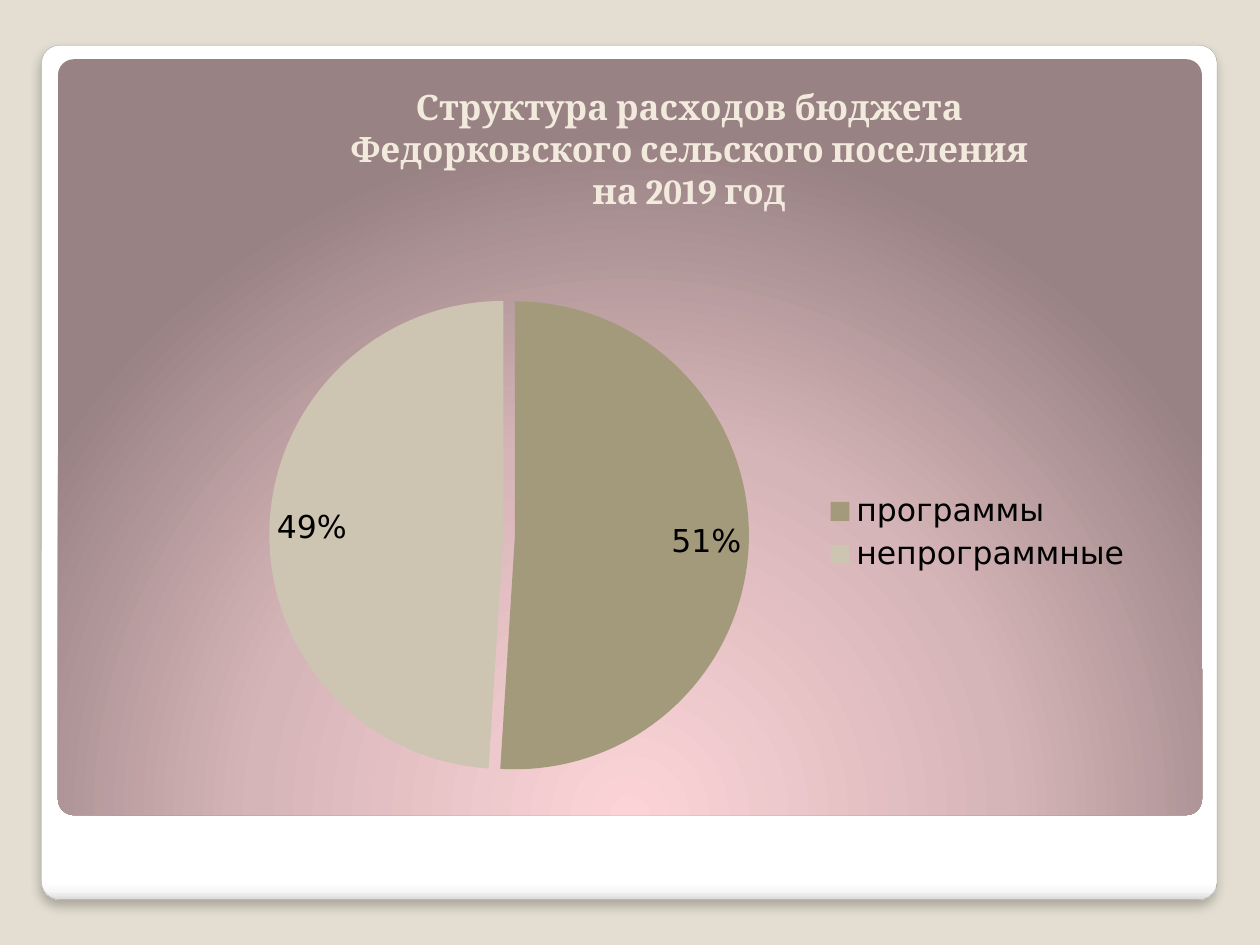
import pptx
import pptx.chart.data
import pptx.dml.color
import pptx.enum.chart
import pptx.enum.shapes
import pptx.enum.text
import pptx.oxml
import pptx.util
from pptx.util import Inches

COLORS = {
    "background": "E3DED1", "card line": "A4A4A4", "title": "F3EADE", "chart text": "000000",
}
TITLE_LINES = [
    "Структура расходов бюджета",
    "Федорковского сельского поселения",
    "на 2019 год",
]
EXPENSES = [("программы", 0.51, "A39A7B"), ("непрограммные", 0.49, "CDC4B1")]
CARD_STOPS = [(0, "FFFFFF"), (98, "FFFFFF"), (99, "F7F7F7"), (100, "DADADA")]
PANEL_STOPS = [(0, "FCD4D8"), (55, "D6B5B8"), (100, "998284")]
LINEAR_DOWN = '<a:lin ang="5400000" scaled="0"/>'
CIRCLE_FROM_BOTTOM = ('<a:path path="circle"><a:fillToRect l="50000" t="175000" '
                      'r="50000" b="-75000"/></a:path>')
PLOT_AREA = {"x": 0.133, "y": 0.098, "w": 0.465, "h": 0.811}
DRAWING = 'xmlns:a="http://schemas.openxmlformats.org/drawingml/2006/main"'
CHART = 'xmlns:c="http://schemas.openxmlformats.org/drawingml/2006/chart"'


def rgb(value):
    return pptx.dml.color.RGBColor.from_string(value)


def format_font(font, name, size, color, bold=False):
    font.name, font.size, font.bold = name, pptx.util.Pt(size), bold
    font.color.rgb = rgb(color)


def add_text(slide, lines, box, align, anchor, **font_format):
    frame = slide.shapes.add_textbox(*map(Inches, box)).text_frame
    frame.word_wrap = True
    frame.vertical_anchor = anchor
    frame.margin_bottom = Inches(0.03)
    for index, line in enumerate(lines):
        paragraph = frame.paragraphs[0] if index == 0 else frame.add_paragraph()
        paragraph.alignment = align
        run = paragraph.add_run()
        run.text = line
        format_font(run.font, **font_format)


def add_rounded_panel(slide, box, stops, direction):
    shape = slide.shapes.add_shape(
        pptx.enum.shapes.MSO_SHAPE.ROUNDED_RECTANGLE, *map(Inches, box))
    shape.adjustments[0] = 0.021
    shape.shadow.inherit = False
    shape.line.fill.background()
    stop_xml = "".join(
        f'<a:gs pos="{position * 1000}"><a:srgbClr val="{color}"/></a:gs>'
        for position, color in stops)
    gradient = pptx.oxml.parse_xml(
        f'<a:gradFill {DRAWING} rotWithShape="1"><a:gsLst>{stop_xml}</a:gsLst>{direction}</a:gradFill>')
    shape.element.spPr.find(pptx.oxml.ns.qn("a:prstGeom")).addnext(gradient)
    return shape


def add_card(slide):
    card = add_rounded_panel(slide, (0.33, 0.36, 9.33, 6.78), CARD_STOPS, LINEAR_DOWN)
    card.line.color.rgb = rgb(COLORS["card line"])
    card.line.width = pptx.util.Pt(0.16)
    effects = card.element.spPr.find(pptx.oxml.ns.qn("a:effectLst"))
    effects.append(pptx.oxml.parse_xml(
        f'<a:outerShdw {DRAWING} blurRad="{pptx.util.Pt(6)}" dist="{pptx.util.Pt(4)}" '
        'dir="5400000" algn="t" rotWithShape="0"><a:srgbClr val="000000">'
        '<a:alpha val="25000"/></a:srgbClr></a:outerShdw>'))


def set_plot_layout(chart):
    plot_area = chart.element.chart.plotArea
    for old_layout in plot_area.findall(pptx.oxml.ns.qn("c:layout")):
        plot_area.remove(old_layout)
    modes = '<c:xMode val="edge"/><c:yMode val="edge"/>'
    sizes = "".join(f'<c:{key} val="{value}"/>' for key, value in PLOT_AREA.items())
    plot_area.insert(0, pptx.oxml.parse_xml(
        f'<c:layout {CHART}><c:manualLayout><c:layoutTarget val="inner"/>'
        f'{modes}{sizes}</c:manualLayout></c:layout>'))


def add_expense_chart(slide):
    data = pptx.chart.data.CategoryChartData(number_format="0%")
    data.categories = [name for name, _, _ in EXPENSES]
    data.add_series("Series 1", [value for _, value, _ in EXPENSES])
    chart = slide.shapes.add_chart(
        pptx.enum.chart.XL_CHART_TYPE.PIE,
        *map(Inches, (1.06, 1.94, 8.03, 4.58)), data).chart
    format_font(chart.font, "DejaVu Sans", 18, COLORS["chart text"])
    chart.has_title = False
    chart.has_legend = True
    chart.legend.position = pptx.enum.chart.XL_LEGEND_POSITION.RIGHT
    chart.legend.include_in_layout = False
    set_plot_layout(chart)

    plot = chart.plots[0]
    plot.vary_by_categories = True
    plot.has_data_labels = True
    labels = plot.data_labels
    labels.show_value = True
    labels.show_percentage = False
    labels.number_format, labels.number_format_is_linked = "0%", False
    labels.position = pptx.enum.chart.XL_LABEL_POSITION.INSIDE_END
    for index, (_, _, color) in enumerate(EXPENSES):
        slice_format = plot.series[0].points[index].format
        slice_format.fill.solid()
        slice_format.fill.fore_color.rgb = rgb(color)
        slice_format.line.fill.background()
    first_slice = plot.series[0]._element.find(pptx.oxml.ns.qn("c:dPt"))
    first_slice.find(pptx.oxml.ns.qn("c:spPr")).addprevious(
        pptx.oxml.parse_xml(f'<c:explosion {CHART} val="5"/>'))


def main():
    presentation = pptx.Presentation()
    presentation.slide_width, presentation.slide_height = Inches(10), Inches(7.5)
    slide = presentation.slides.add_slide(presentation.slide_layouts[6])
    slide.background.fill.solid()
    slide.background.fill.fore_color.rgb = rgb(COLORS["background"])
    add_card(slide)
    add_rounded_panel(slide, (0.46, 0.47, 9.08, 6), PANEL_STOPS, CIRCLE_FROM_BOTTOM)
    add_text(slide, TITLE_LINES, (1.49, 0.84, 7.96, 0.87),
             pptx.enum.text.PP_ALIGN.CENTER, pptx.enum.text.MSO_ANCHOR.BOTTOM,
             name="Cambria", size=20, color=COLORS["title"], bold=True)
    add_expense_chart(slide)
    presentation.save("out.pptx")


if __name__ == "__main__":
    main()
